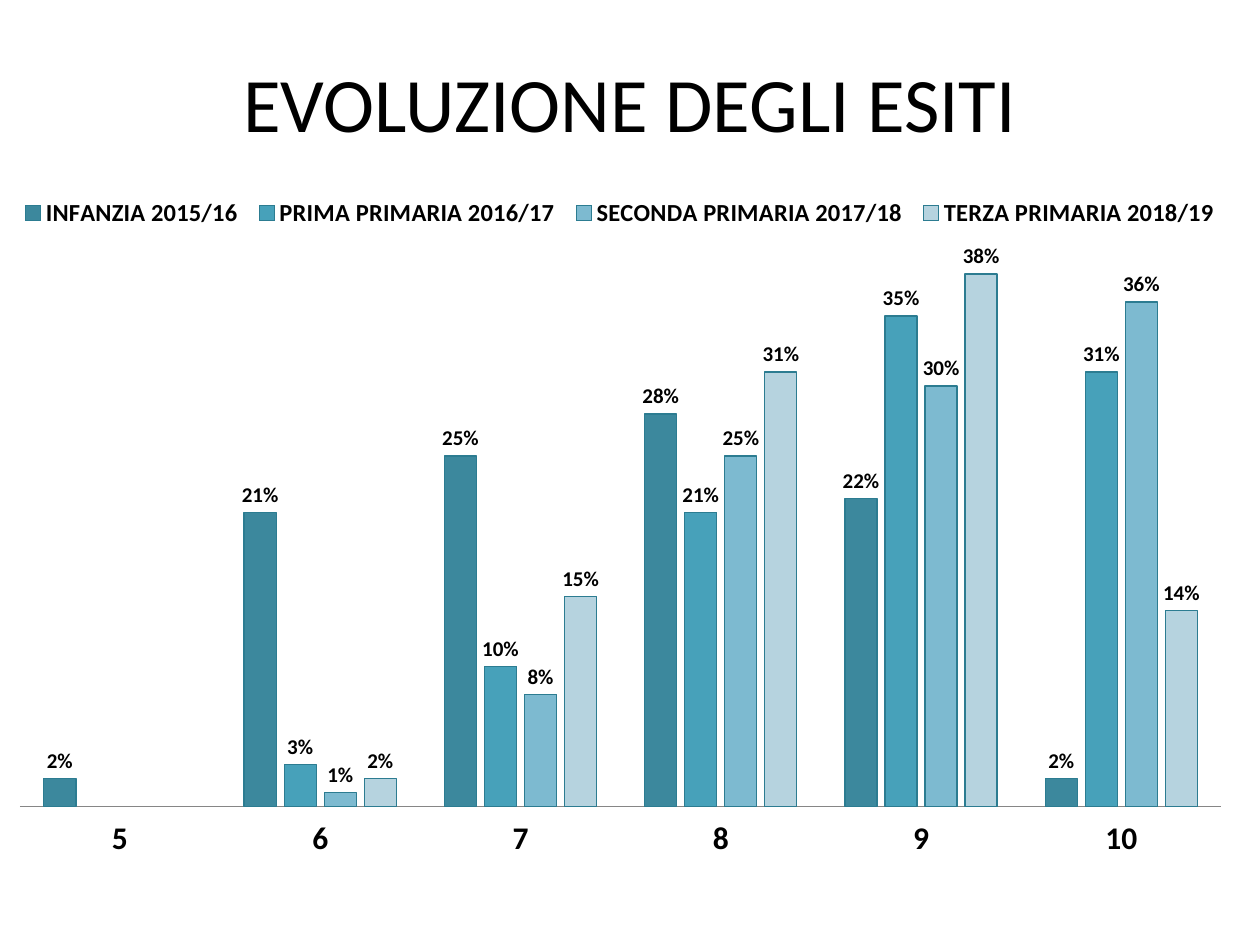
from lxml.etree import SubElement
from pptx import Presentation
from pptx.chart.data import CategoryChartData
from pptx.dml.color import RGBColor
from pptx.enum.chart import XL_CHART_TYPE as ChartType
from pptx.enum.chart import XL_LABEL_POSITION as LabelPos
from pptx.enum.chart import XL_LEGEND_POSITION as LegendPos
from pptx.enum.chart import XL_TICK_LABEL_POSITION as TickLabelPos
from pptx.enum.chart import XL_TICK_MARK as TickMark
from pptx.enum.text import MSO_ANCHOR as Anchor
from pptx.enum.text import PP_ALIGN as Align
from pptx.oxml.ns import qn
from pptx.util import Cm, Pt

BLACK = RGBColor(0x00, 0x00, 0x00)
AXIS_GREY = RGBColor(0x86, 0x86, 0x86)
BAR_EDGE = RGBColor(0x2C, 0x7C, 0x91)
BAR_FILLS = [
    RGBColor(0x3C, 0x88, 0x9D),
    RGBColor(0x47, 0xA1, 0xBA),
    RGBColor(0x7D, 0xBA, 0xD0),
    RGBColor(0xB6, 0xD3, 0xDF),
]

GRADES = ["5", "6", "7", "8", "9", "10"]
RESULTS = {
    "INFANZIA 2015/16": [0.02, 0.21, 0.25, 0.28, 0.22, 0.02],
    "PRIMA PRIMARIA 2016/17": [None, 0.03, 0.10, 0.21, 0.35, 0.31],
    "SECONDA PRIMARIA 2017/18": [None, 0.01, 0.08, 0.25, 0.30, 0.36],
    "TERZA PRIMARIA 2018/19": [None, 0.02, 0.15, 0.31, 0.38, 0.14],
}


def set_layout(parent, index, x, y, w, h, inner=False):
    """Place a chart part by fractions of the chart area."""
    for old in parent.findall(qn("c:layout")):
        parent.remove(old)
    layout = SubElement(parent, qn("c:layout"))
    parent.insert(index, layout)
    manual = SubElement(layout, qn("c:manualLayout"))
    values = [("xMode", "edge"), ("yMode", "edge"),
              ("x", x), ("y", y), ("w", w), ("h", h)]
    if inner:
        values.insert(0, ("layoutTarget", "inner"))
    for tag, value in values:
        SubElement(manual, qn(f"c:{tag}")).set("val", str(value))


class SlideBuilder:
    font = "Calibri"

    def __init__(self, prs):
        self.slide = prs.slides.add_slide(prs.slide_layouts[5])

    def style(self, font, size, bold=False):
        font.name = self.font
        font.size = Pt(size)
        font.bold = bold
        font.color.rgb = BLACK

    def title(self, text, left, top, width, height):
        sp = self.slide.shapes.title
        sp.left, sp.top, sp.width, sp.height = map(Cm, (left, top, width, height))
        tf = sp.text_frame
        tf.vertical_anchor = Anchor.MIDDLE
        p = tf.paragraphs[0]
        p.alignment = Align.CENTER
        r = p.add_run()
        r.text = text
        self.style(r.font, 44)

    def column_chart(self, categories, results, left, top, width, height):
        data = CategoryChartData(number_format="0%")
        data.categories = categories
        for name, values in results.items():
            data.add_series(name, values)
        chart = self.slide.shapes.add_chart(
            ChartType.COLUMN_CLUSTERED,
            *map(Cm, (left, top, width, height)), data).chart
        self.style(chart.font, 18)
        chart.has_title = False

        # Bars and their labels
        plot = chart.plots[0]
        plot.gap_width = 150
        plot.overlap = -25
        plot.vary_by_categories = False
        for series, color in zip(plot.series, BAR_FILLS):
            series.format.fill.solid()
            series.format.fill.fore_color.rgb = color
            series.format.line.color.rgb = BAR_EDGE
            series.format.line.width = Pt(0.75)
            labels = series.data_labels
            labels.show_value = True
            labels.number_format = "0%"
            labels.number_format_is_linked = False
            labels.position = LabelPos.OUTSIDE_END
            self.style(labels.font, 12, bold=True)

        # Axes
        grades = chart.category_axis
        grades.major_tick_mark = TickMark.NONE
        grades.tick_label_position = TickLabelPos.LOW
        grades.format.line.color.rgb = AXIS_GREY
        self.style(grades.tick_labels.font, 18, bold=True)
        shares = chart.value_axis
        shares.minimum_scale = 0
        shares.maximum_scale = 0.4
        shares.has_major_gridlines = False
        shares.visible = False

        # Legend
        chart.has_legend = True
        legend = chart.legend
        legend.position = LegendPos.TOP
        legend.include_in_layout = False
        self.style(legend.font, 14, bold=True)

        # Placement inside the chart area
        chart_el = chart.element.find(qn("c:chart"))
        set_layout(chart_el.find(qn("c:plotArea")), 0,
                   0.016, 0.12, 0.969, 0.762, inner=True)
        set_layout(chart_el.find(qn("c:legend")), 1, 0.01, 0.05, 0.98, 0.05)


def main():
    prs = Presentation()
    prs.slide_width, prs.slide_height = Cm(25.4), Cm(19.05)
    builder = SlideBuilder(prs)
    builder.title("EVOLUZIONE DEGLI ESITI", 1.27, 0.76, 22.86, 2.57)
    builder.column_chart(GRADES, RESULTS, 0, 3.18, 25, 14.83)
    prs.save("out.pptx")


if __name__ == "__main__":
    main()
